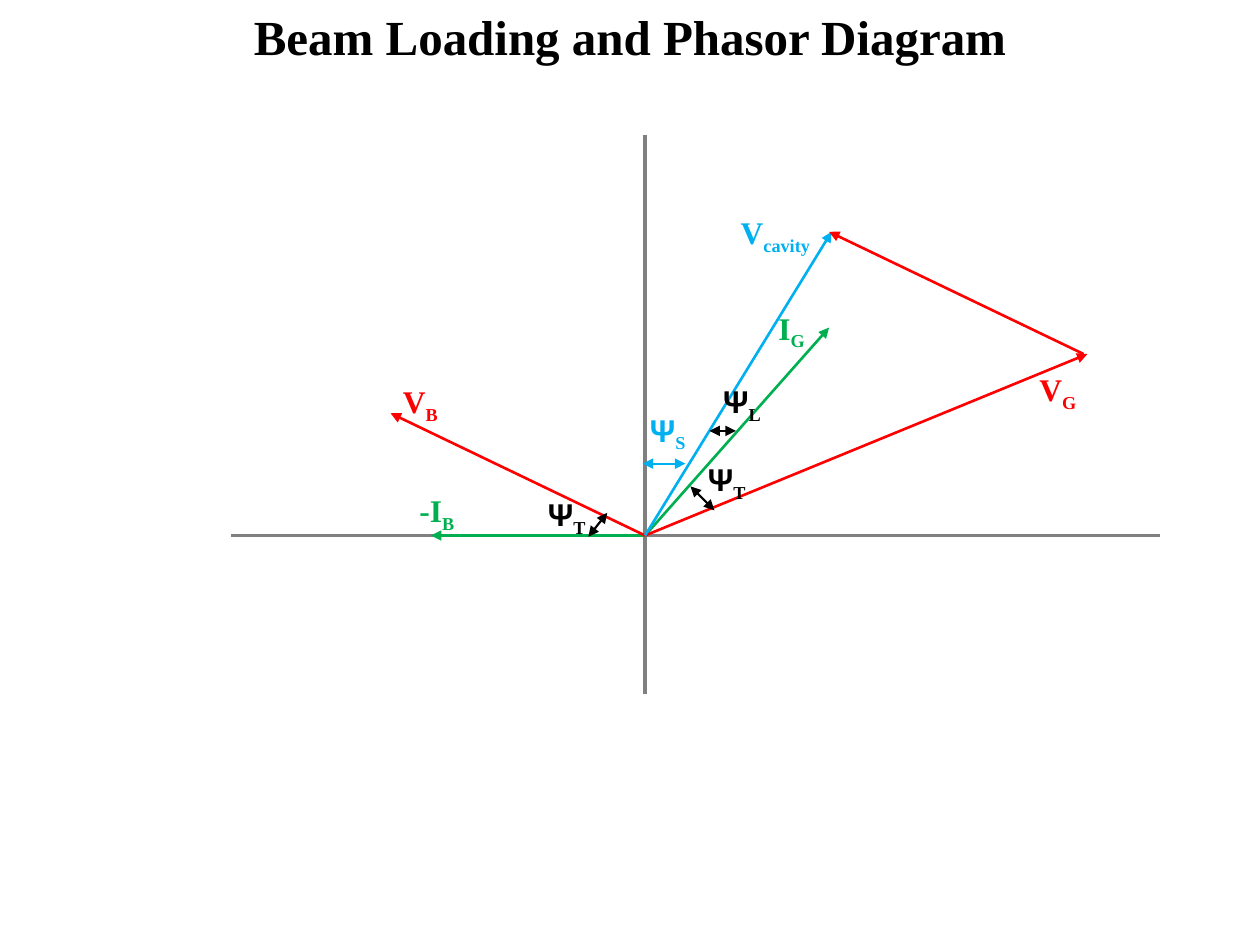
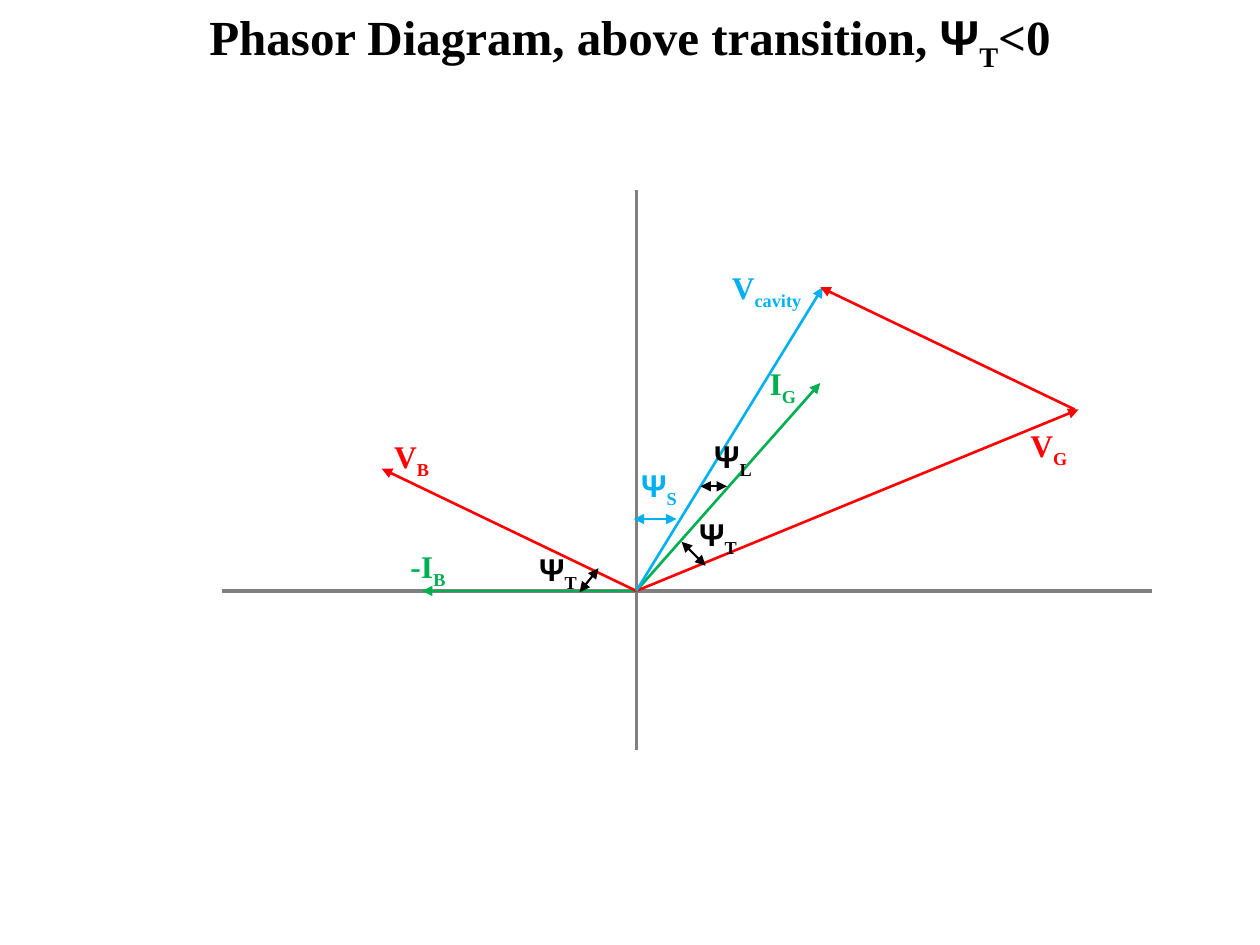
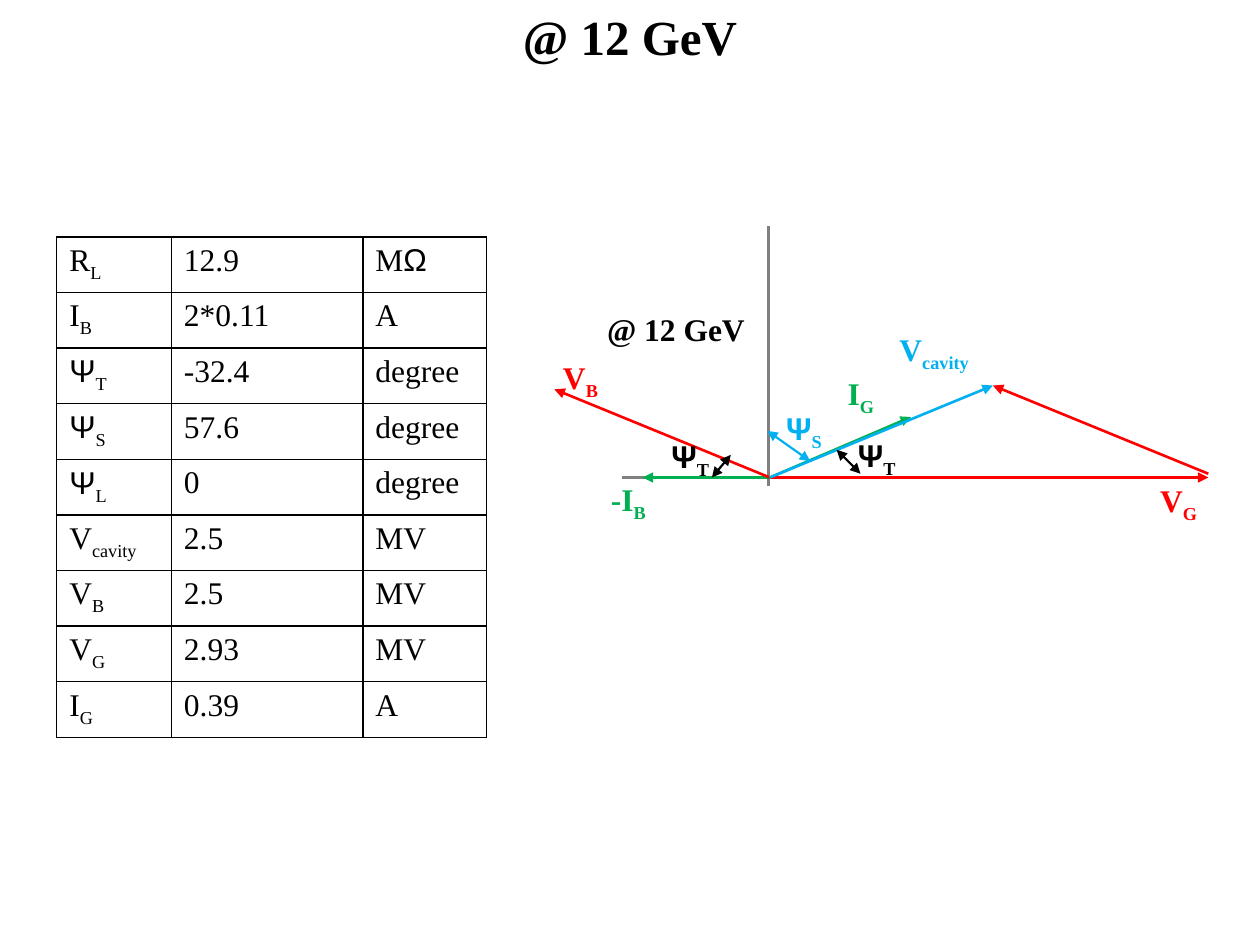
from itertools import groupby

from lxml.etree import SubElement
from pptx import Presentation
from pptx.dml.color import RGBColor
from pptx.enum.shapes import MSO_CONNECTOR as Connector
from pptx.enum.text import MSO_AUTO_SIZE as AutoSize, PP_ALIGN as Align
from pptx.oxml.ns import qn
from pptx.util import Inches, Pt

# Shared style
BLACK, GREY = "000000", "808080"
RED, GREEN, BLUE = "FF0000", "00B050", "00B0F0"
GREEK = "ΨΩ"
rgb = RGBColor.from_string


def write(paragraph, text, size=18, color=BLACK, bold=True):
    """Every second part between bars is a subscript; Greek letters are in Arial."""
    for number, part in enumerate(text.split("|")):
        for greek, letters in groupby(part, lambda letter: letter in GREEK):
            run = paragraph.add_run()
            run.text = "".join(letters)
            run.font.name = "Arial" if greek else "Times New Roman"
            run.font.size = Pt(size)
            run.font.bold = bold
            run.font.color.rgb = rgb(color)
            if number % 2:
                run.font._element.set("baseline", "-25000")


def draw_line(slide, origin, start, end, color, width, arrowheads=()):
    """Draw a line between two points given relative to the origin."""
    (x0, y0), (x1, y1), (x2, y2) = origin, start, end
    line = slide.shapes.add_connector(
        Connector.STRAIGHT,
        Inches(x0 + x1), Inches(y0 + y1), Inches(x0 + x2), Inches(y0 + y2))
    line.line.color.rgb = rgb(color)
    line.line.width = Pt(width)
    outline = line.line._get_or_add_ln()
    for arrowhead in arrowheads:
        SubElement(outline, qn(f"a:{arrowhead}"), type="triangle")
    SubElement(line._element.spPr, qn("a:effectLst"))


# Diagram with three angles: points are inches from the origin of the phasors
general = {
    "axes": [((0, -3.18), (0, 1.26)), ((-3.29, 0), (4.09, 0))],
    "phasors": [
        ((0, 0), (-1.7, 0), GREEN),
        ((0, 0), (-2.02, -0.97), RED),
        ((0, 0), (1.46, -1.65), GREEN),
        ((0, 0), (3.51, -1.44), RED),
        ((0, 0), (1.48, -2.41), BLUE),
        ((3.48, -1.44), (1.46, -2.41), RED),
    ],
    "angles": [
        ((0.72, -0.83), (0.51, -0.83), BLACK),
        ((0.36, -0.39), (0.55, -0.2), BLACK),
        ((-0.45, 0.01), (-0.3, -0.18), BLACK),
        ((0.32, -0.57), (-0.02, -0.57), BLUE),
    ],
    "labels": [
        ("-I|B", GREEN, -1.89, -0.4),
        ("I|G", GREEN, 0.96, -1.85),
        ("V|B", RED, -2.02, -1.27),
        ("Ψ|T", BLACK, -0.87, -0.37),
        ("Ψ|T", BLACK, 0.4, -0.65),
        ("V|G", RED, 3.03, -1.36),
        ("V|cavity", BLUE, 0.66, -2.61),
        ("Ψ|L", BLACK, 0.52, -1.27),
        ("Ψ|S", BLUE, -0.06, -1.04),
    ],
}

# Diagram at 12 GeV, where the load angle is zero
at_12_gev = {
    "axes": [((-0.01, -2), (-0.01, 0.07)), ((-1.17, 0), (1.96, 0))],
    "phasors": [
        ((0, 0), (-1.01, 0), GREEN),
        ((0, 0), (-1.71, -0.7), RED),
        ((0, 0), (1.12, -0.48), GREEN),
        ((0, 0), (3.48, 0), RED),
        ((0, 0), (1.77, -0.73), BLUE),
        ((3.48, -0.03), (1.77, -0.73), RED),
    ],
    "angles": [
        ((0.53, -0.22), (0.72, -0.03), BLACK),
        ((-0.46, 0), (-0.31, -0.18), BLACK),
        ((0.32, -0.13), (-0.02, -0.37), BLUE),
    ],
    "labels": [
        ("-I|B", GREEN, -1.36, -0.03),
        ("I|G", GREEN, 0.52, -0.87),
        ("V|B", RED, -1.74, -1),
        ("Ψ|T", BLACK, -0.88, -0.37),
        ("Ψ|T", BLACK, 0.6, -0.38),
        ("V|G", RED, 3, -0.02),
        ("V|cavity", BLUE, 0.93, -1.22),
        ("Ψ|S", BLUE, 0.03, -0.59),
        ("@ 12 GeV", BLACK, -1.4, -1.38),
    ],
}
label_widths = {"V|cavity": 0.85, "@ 12 GeV": 1.31}

pages = [
    ("Beam Loading and Phasor Diagram", (5.12, 4.25), general),
    ("Phasor Diagram, above transition, Ψ|T|<0", (5.05, 4.69), general),
    ("@ 12 GeV", (6.11, 3.79), at_12_gev),
]

deck = Presentation()
deck.slide_width, deck.slide_height = Inches(10), Inches(7.5)

for heading, origin, diagram in pages:
    slide = deck.slides.add_slide(deck.slide_layouts[6])

    # Title
    title = slide.shapes.add_textbox(0, 0, Inches(10), Inches(0.57)).text_frame
    title.word_wrap = True
    title.auto_size = AutoSize.SHAPE_TO_FIT_TEXT
    title.paragraphs[0].alignment = Align.CENTER
    write(title.paragraphs[0], heading, size=28)

    # Axes, phasors and angles
    for start, end in diagram["axes"]:
        draw_line(slide, origin, start, end, GREY, 0)
    for start, end, color in diagram["phasors"]:
        draw_line(slide, origin, start, end, color, 1.5, ["tailEnd"])
    for start, end, color in diagram["angles"]:
        draw_line(slide, origin, start, end, color, 1.25, ["headEnd", "tailEnd"])

    # Labels
    for text, color, x, y in diagram["labels"]:
        label = slide.shapes.add_textbox(
            Inches(origin[0] + x), Inches(origin[1] + y),
            Inches(label_widths.get(text, 0.67)), Inches(0.4)).text_frame
        label.word_wrap = "|" in text
        label.auto_size = AutoSize.SHAPE_TO_FIT_TEXT
        if "|" not in text:
            label.paragraphs[0].alignment = Align.CENTER
        write(label.paragraphs[0], text, color=color)

# Table of parameters on the last slide
parameters = [
    ("R|L", "12.9", "MΩ"),
    ("I|B", "2*0.11", "A"),
    ("Ψ|T", "-32.4", "degree"),
    ("Ψ|S", "57.6", "degree"),
    ("Ψ|L", "0", "degree"),
    ("V|cavity", "2.5", "MV"),
    ("V|B", "2.5", "MV"),
    ("V|G", "2.93", "MV"),
    ("I|G", "0.39", "A"),
]
table = slide.shapes.add_table(
    len(parameters), 3, Inches(0.45), Inches(1.88), Inches(3.4), Inches(3.65)).table
table.first_row = table.horz_banding = False
for column, width in zip(table.columns, (0.91, 1.52, 0.98)):
    column.width = Inches(width)
for row, parameter in enumerate(parameters):
    for column, text in enumerate(parameter):
        cell = table.cell(row, column)
        write(cell.text_frame.paragraphs[0], text, bold=False)
        properties = cell._tc.get_or_add_tcPr()
        for side in ("lnL", "lnR", "lnT", "lnB"):
            border = SubElement(properties, qn(f"a:{side}"), w=str(Pt(1)))
            fill = SubElement(border, qn("a:solidFill"))
            SubElement(fill, qn("a:srgbClr"), val=BLACK)
        cell.fill.background()

deck.save("out.pptx")
